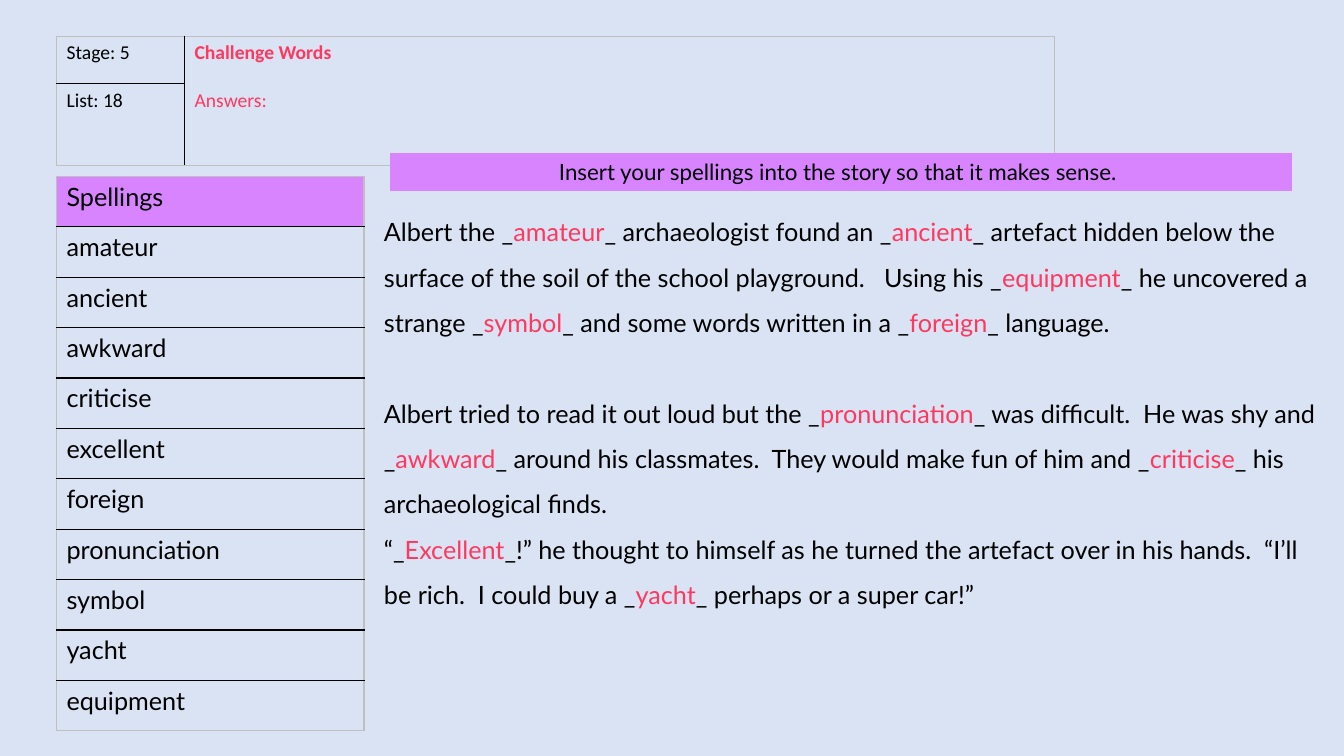
from lxml import etree
from pptx import Presentation
from pptx.dml.color import RGBColor
from pptx.enum.shapes import MSO_SHAPE
from pptx.enum.text import MSO_ANCHOR, PP_ALIGN
from pptx.oxml.ns import qn
from pptx.util import Inches, Pt

RECTANGLE = MSO_SHAPE.RECTANGLE
MIDDLE = MSO_ANCHOR.MIDDLE
LEFT, CENTER = PP_ALIGN.LEFT, PP_ALIGN.CENTER

COLORS = {
    "background": "DAE3F3",
    "banner": "D883FF",
    "text": "000000",
    "answer": "FF3860",
    "inner_border": "000000",
    "outer_border": "BFBFBF",
}
SPELLINGS = [
    "amateur", "ancient", "awkward", "criticise", "excellent",
    "foreign", "pronunciation", "symbol", "yacht", "equipment",
]
INSTRUCTION = "Insert your spellings into the story so that it makes sense. "
# Each answer stands between two underscores.
STORY = [
    "Albert the _amateur_ archaeologist found an _ancient_ artefact hidden below "
    "the surface of the soil of the school playground.   Using his _equipment_ he "
    "uncovered a strange _symbol_ and some words written in a _foreign_ language.",
    "Albert tried to read it out loud but the _pronunciation_ was difficult.  He "
    "was shy and _awkward_ around his classmates.  They would make fun of him and "
    "_criticise_ his archaeological finds.",
    "“_Excellent_!” he thought to himself as he turned the artefact over in his "
    "hands.  “I’ll be rich.  I could buy a _yacht_ perhaps or a super car!”",
]


def rgb(name):
    return RGBColor.from_string(COLORS[name])


def add_text(para, text, size=18, font="Lato", color="text", bold=False, align=LEFT):
    para.alignment = align
    span = para.add_run()
    span.text = text
    span.font.size = Pt(size)
    span.font.name = font
    span.font.bold = bold
    span.font.color.rgb = rgb(color)


def set_borders(cell, colors):
    """Give the left, right, top and bottom sides a line, in that order."""
    properties = cell._tc.get_or_add_tcPr()
    for index, (side, color) in enumerate(zip("LRTB", colors)):
        line = etree.Element(qn(f"a:ln{side}"), w=str(Pt(1)))
        fill = etree.SubElement(line, qn("a:solidFill"))
        etree.SubElement(fill, qn("a:srgbClr"), val=COLORS[color])
        properties.insert(index, line)


def add_grid(page, left, top, widths, heights):
    """Add an unfilled table with light outer and dark inner borders."""
    frame = page.shapes.add_table(
        len(heights), len(widths), Inches(left), Inches(top),
        Inches(sum(widths)), Inches(sum(heights)))
    table = frame.table
    table.first_row = table.horz_banding = False
    for column, width in zip(table.columns, widths):
        column.width = Inches(width)
    for row, height in zip(table.rows, heights):
        row.height = Inches(height)
    for cell in table.iter_cells():
        cell.fill.background()
    return table


def draw_borders(table):
    rows, columns = len(table.rows), len(table.columns)
    for row in range(rows):
        for column in range(columns):
            cell = table.cell(row, column)
            bottom = row + (cell.span_height if cell.is_merge_origin else 1)
            outer = (column == 0, column + 1 == columns,
                     row == 0 or cell.is_spanned, bottom == rows)
            set_borders(cell, ["outer_border" if edge else "inner_border"
                               for edge in outer])


def add_heading(page, left, top):
    table = add_grid(page, left, top, [1.27, 8.63], [0.47, 0.81])
    style = {"size": 14, "font": "Calibri"}
    for row, label in enumerate(["Stage: 5", "List: 18"]):
        add_text(table.cell(row, 0).text_frame.paragraphs[0], label, **style)
    heading = table.cell(0, 1)
    heading.merge(table.cell(1, 1))
    add_text(heading.text_frame.paragraphs[0], "Challenge Words",
             color="answer", bold=True, **style)
    answers = heading.text_frame.add_paragraph()
    answers.space_before = Pt(17)
    add_text(answers, "Answers:", color="answer", **style)
    draw_borders(table)


def add_spellings(page, left, top):
    words = ["Spellings"] + SPELLINGS
    table = add_grid(page, left, top, [3.05], [0.5] * len(words))
    for row, word in enumerate(words):
        add_text(table.cell(row, 0).text_frame.paragraphs[0], word)
    header = table.cell(0, 0)
    header.fill.solid()
    header.fill.fore_color.rgb = rgb("banner")
    draw_borders(table)


def add_story(page, left, top, width, height):
    box = page.shapes.add_textbox(*map(Inches, (left, top, width, height)))
    frame = box.text_frame
    frame.word_wrap = True
    for index, passage in enumerate(STORY):
        para = frame.add_paragraph() if index else frame.paragraphs[0]
        para.line_spacing = 1.5
        if index == 1:
            para.space_before = Pt(32.4)
        pieces = passage.split("_")
        for position, piece in enumerate(pieces):
            if position % 2:
                add_text(para, piece, color="answer")
            else:
                opening = "_" if position else ""
                closing = "_" if position + 1 < len(pieces) else ""
                add_text(para, opening + piece + closing)


def add_banner(page, left, top, width, height):
    banner = page.shapes.add_shape(
        RECTANGLE, *map(Inches, (left, top, width, height)))
    banner.shadow.inherit = False
    banner.fill.solid()
    banner.fill.fore_color.rgb = rgb("banner")
    banner.line.color.rgb = rgb("banner")
    banner.line.width = Pt(0.75)
    frame = banner.text_frame
    frame.word_wrap = True
    frame.vertical_anchor = MIDDLE
    add_text(frame.paragraphs[0], INSTRUCTION, size=16, align=CENTER)


def main():
    deck = Presentation()
    deck.slide_width, deck.slide_height = Inches(13.33), Inches(7.5)
    page = deck.slides.add_slide(deck.slide_layouts.get_by_name("Blank"))
    page.background.fill.solid()
    page.background.fill.fore_color.rgb = rgb("background")
    add_spellings(page, 0.56, 1.75)
    add_heading(page, 0.56, 0.36)
    add_story(page, 3.71, 1.95, 9.44, 5.04)
    add_banner(page, 3.87, 1.52, 8.94, 0.37)
    deck.save("out.pptx")


if __name__ == "__main__":
    main()
